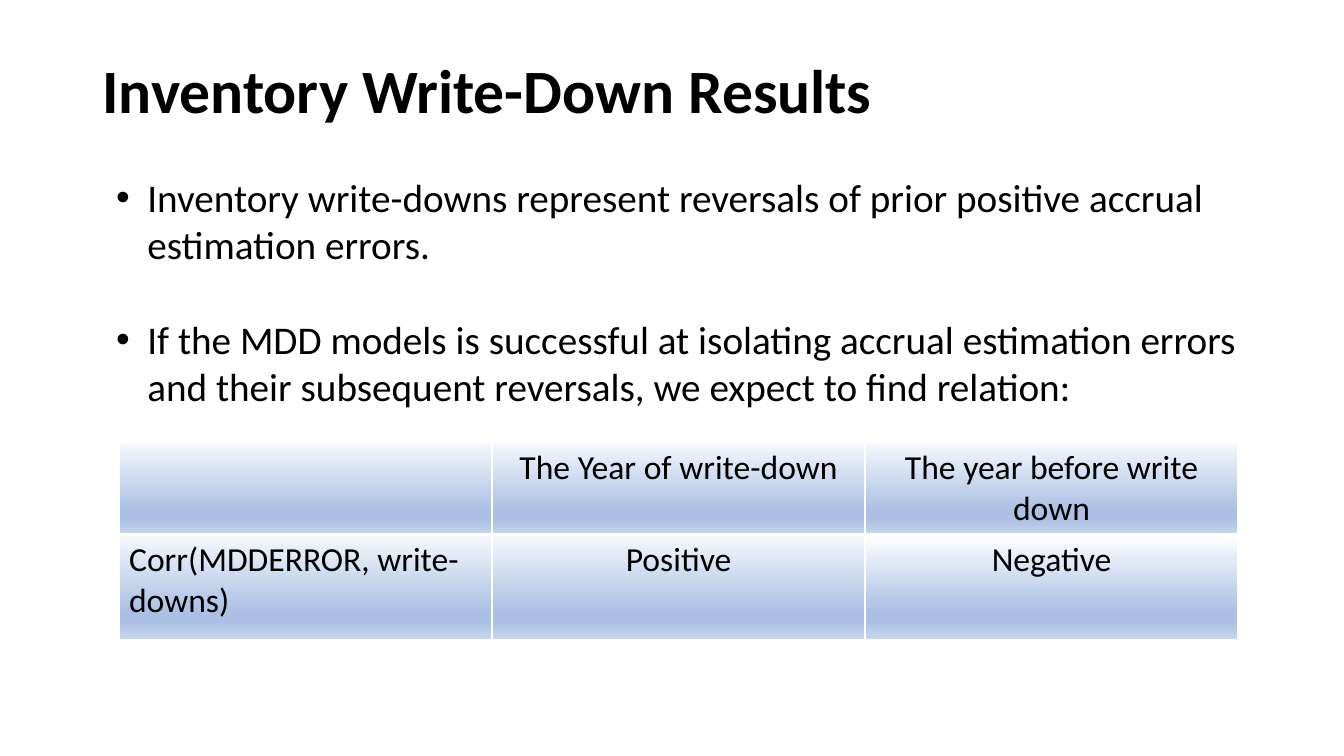
from dataclasses import dataclass

from lxml.etree import SubElement
from pptx import Presentation
from pptx.dml.color import RGBColor
from pptx.enum.text import MSO_ANCHOR, MSO_AUTO_SIZE, PP_ALIGN
from pptx.oxml.ns import qn
from pptx.util import Cm, Pt


@dataclass(frozen=True)
class Theme:
    font: str = "Calibri"
    text: str = "000000"
    border: str = "FFFFFF"
    shades: tuple = ((0, "F6F8FC"), (74, "ABC0E4"), (83, "ABC0E4"), (100, "C7D5ED"))
    last_cell_top: str = "FFFFFF"
    title_size: int = 44
    body_size: int = 28
    table_size: int = 24


class SlideBuilder:
    def __init__(self, slide, theme):
        self.s = slide
        self.theme = theme

    def style(self, p, size, align=PP_ALIGN.LEFT, bold=False):
        p.alignment = align
        p.font.name = self.theme.font
        p.font.size = Pt(size)
        p.font.bold = bold
        p.font.color.rgb = RGBColor.from_string(self.theme.text)

    def place(self, sp, left, top, width, height):
        sp.left, sp.top, sp.width, sp.height = map(Cm, (left, top, width, height))
        sp.text_frame.auto_size = MSO_AUTO_SIZE.NONE
        return sp.text_frame

    def title(self, text, *box):
        tf = self.place(self.s.shapes.title, *box)
        tf.vertical_anchor = MSO_ANCHOR.MIDDLE
        tf.text = text
        p = tf.paragraphs[0]
        p.line_spacing = 0.9
        self.style(p, self.theme.title_size, bold=True)

    def bullets(self, items, *box, indent=0.79, gap=34):
        tf = self.place(self.s.placeholders[1], *box)
        tf.text = "\n".join(items)
        for i, p in enumerate(tf.paragraphs):
            self.style(p, self.theme.body_size)
            p.space_before = Pt(gap if i else 0)
            pPr = p._p.get_or_add_pPr()
            pPr.set("marL", str(Cm(indent)))
            pPr.set("indent", str(-Cm(indent)))

    def table(self, rows, left, top, col_width, row_heights):
        n_rows, n_cols = len(rows), len(rows[0])
        frame = self.s.shapes.add_table(n_rows, n_cols, Cm(left), Cm(top),
                                        Cm(col_width * n_cols), Cm(sum(row_heights)))
        table = frame.table
        table.first_row = table.horz_banding = False
        for col in table.columns:
            col.width = Cm(col_width)
        for i, (row, height) in enumerate(zip(rows, row_heights)):
            table.rows[i].height = Cm(height)
            for j, text in enumerate(row):
                cell = table.cell(i, j)
                cell.text = text
                self.style(cell.text_frame.paragraphs[0], self.theme.table_size,
                           PP_ALIGN.CENTER if j else PP_ALIGN.LEFT)
                # The rule under the header row is heavier
                self.borders(cell, top=3 if i == 1 else 1, bottom=3 if i == 0 else 1)
                shades = self.theme.shades
                if (i, j) == (n_rows - 1, n_cols - 1):
                    shades = ((0, self.theme.last_cell_top),) + shades[1:]
                self.shade(cell, shades)

    def borders(self, cell, top, bottom):
        tcPr = cell._tc.get_or_add_tcPr()
        for tag, width in (("lnL", 1), ("lnR", 1), ("lnT", top), ("lnB", bottom)):
            ln = SubElement(tcPr, qn(f"a:{tag}"), w=str(Pt(width)))
            fill = SubElement(ln, qn("a:solidFill"))
            SubElement(fill, qn("a:srgbClr"), val=self.theme.border)

    def shade(self, cell, shades):
        """Fill a cell with a top-to-bottom gradient of (percent, colour) stops."""
        grad = SubElement(cell._tc.get_or_add_tcPr(), qn("a:gradFill"))
        stops = SubElement(grad, qn("a:gsLst"))
        for percent, colour in shades:
            gs = SubElement(stops, qn("a:gs"), pos=str(percent * 1000))
            SubElement(gs, qn("a:srgbClr"), val=colour)
        SubElement(grad, qn("a:lin"), ang="5400000", scaled="0")


def main():
    prs = Presentation()
    prs.slide_width, prs.slide_height = Cm(33.87), Cm(19.05)
    s = SlideBuilder(prs.slides.add_slide(prs.slide_layouts[1]), Theme())
    s.title("Inventory Write-Down Results", 2.33, 1, 29.21, 2.72)
    s.bullets([
        "Inventory write-downs represent reversals of prior positive accrual "
        "estimation errors.",
        "If the MDD models is successful at isolating accrual estimation errors "
        "and their subsequent reversals, we expect to find relation:",
    ], 2.67, 4.24, 29.41, 7.77)
    s.table([
        ["", "The Year of write-down", "The year before write down"],
        ["Corr(MDDERROR, write-downs)", "Positive", "Negative"],
    ], 3, 11.15, 9.4, (2.29, 2.64))
    prs.save("out.pptx")


if __name__ == "__main__":
    main()
